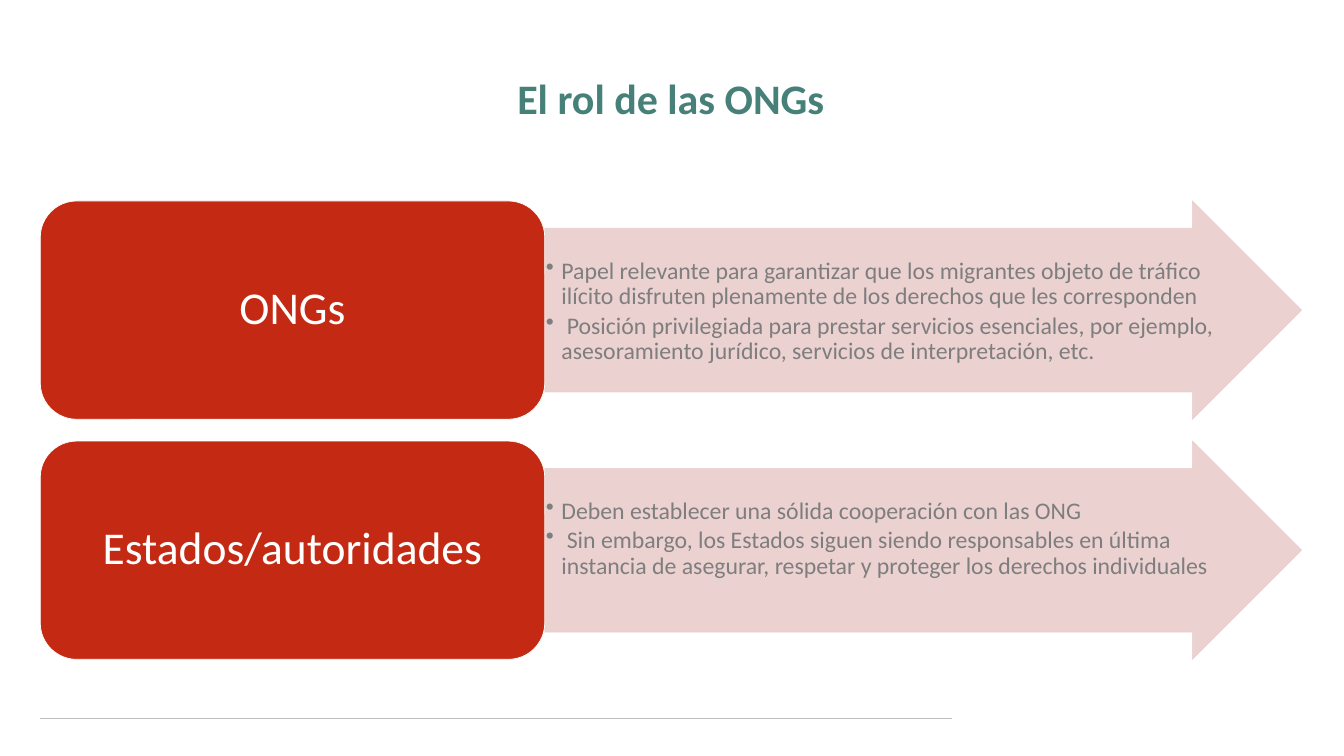
from lxml import etree
from pptx import Presentation
from pptx.dml.color import RGBColor
from pptx.enum.shapes import MSO_CONNECTOR, MSO_SHAPE
from pptx.enum.text import MSO_ANCHOR as Anchor, PP_ALIGN as Align
from pptx.oxml.ns import qn
from pptx.util import Cm, Pt

FONT = "Calibri"
RED, PINK, GREEN = "C42A13", "EACDCC", "468078"
GREY, RULE, WHITE = "7E7E7E", "BFBFBF", "FFFFFF"

LEFT, WIDTH = 2.03, 63.55
ROW_TOP, ROW_HEIGHT, ROW_STEP = 10.13, 11, 12.1
LABEL_SHARE = 0.4

ROWS = [
    ("ONGs", [
        "Papel relevante para garantizar que los migrantes objeto de tráfico "
        "ilícito disfruten plenamente de los derechos que les corresponden",
        " Posición privilegiada para prestar servicios esenciales, por ejemplo, "
        "asesoramiento jurídico, servicios de interpretación, etc.",
    ]),
    ("Estados/autoridades", [
        "Deben establecer una sólida cooperación con las ONG",
        " Sin embargo, los Estados siguen siendo responsables en última "
        "instancia de asegurar, respetar y proteger los derechos individuales",
    ]),
]


def color(value):
    return RGBColor.from_string(value)


def set_frame(frame, anchor, side, top, bottom):
    frame.word_wrap = True
    frame.vertical_anchor = anchor
    frame.margin_left = frame.margin_right = Cm(side)
    frame.margin_top, frame.margin_bottom = Cm(top), Cm(bottom)


def style(para, size, shade, align=Align.CENTER, bold=False):
    para.alignment = align
    para.line_spacing = 0.9
    for span in para.runs:
        span.font.name = FONT
        span.font.size = Pt(size)
        span.font.bold = bold
        span.font.color.rgb = color(shade)


def add_bullet(para, indent):
    props = para._p.get_or_add_pPr()
    props.set("marL", str(Cm(indent)))
    props.set("indent", str(-Cm(indent)))
    etree.SubElement(props, qn("a:buChar"), char="•")


def add_block(page, kind, box, fill, line):
    shape = page.shapes.add_shape(kind, *(Cm(length) for length in box))
    shape.shadow.inherit = False
    shape.fill.solid()
    shape.fill.fore_color.rgb = color(fill)
    shape.line.color.rgb = color(line)
    shape.line.width = Pt(1)
    return shape


def set_opacity(shape, percent):
    for shade in shape._element.spPr.iter(qn("a:srgbClr")):
        etree.SubElement(shade, qn("a:alpha"), val=str(percent * 1000))


def add_title(page, text, left, top, width, height):
    title = page.shapes.add_textbox(Cm(left), Cm(top), Cm(width), Cm(height))
    frame = title.text_frame
    set_frame(frame, Anchor.MIDDLE, 0.5, 0.25, 0.25)
    frame.text = text
    style(frame.paragraphs[0], 60, GREEN, bold=True)


def add_row(page, label, points, left, top, width, height):
    label_width = width * LABEL_SHARE

    # Arrow with the bulleted points
    arrow = add_block(page, MSO_SHAPE.RIGHT_ARROW,
                      (left + label_width, top, width - label_width, height), PINK, PINK)
    arrow.adjustments[0], arrow.adjustments[1] = 0.75, 0.5
    set_opacity(arrow, 90)
    frame = arrow.text_frame
    set_frame(frame, Anchor.TOP, 0.05, 1.53, 0.05)
    frame.text = "\n".join(points)
    for para in frame.paragraphs:
        add_bullet(para, 0.79)
        style(para, 34, GREY, Align.LEFT)
        para.space_after = Pt(5)

    # Rounded label
    block = add_block(page, MSO_SHAPE.ROUNDED_RECTANGLE,
                      (left, top, label_width, height), RED, WHITE)
    frame = block.text_frame
    set_frame(frame, Anchor.MIDDLE, 0.69, 0.35, 0.35)
    frame.text = label
    style(frame.paragraphs[0], 65, WHITE)


def add_footer_rule(page, left, top, width):
    rule = page.shapes.add_connector(MSO_CONNECTOR.STRAIGHT, Cm(left), Cm(top),
                                     Cm(left + width), Cm(top))
    rule.line.color.rgb = color(RULE)
    rule.line.width = Pt(2.25)
    etree.SubElement(rule._element.spPr, qn("a:effectLst"))


def main():
    deck = Presentation()
    deck.slide_width, deck.slide_height = Cm(67.72), Cm(38.1)
    page = deck.slides.add_slide(deck.slide_layouts[6])

    add_footer_rule(page, LEFT, 36.2, 45.92)
    add_title(page, "El rol de las ONGs", LEFT, 1.4, WIDTH, 7.37)
    for index, (label, points) in enumerate(ROWS):
        add_row(page, label, points, LEFT, ROW_TOP + index * ROW_STEP, WIDTH, ROW_HEIGHT)

    deck.save("out.pptx")


if __name__ == "__main__":
    main()
